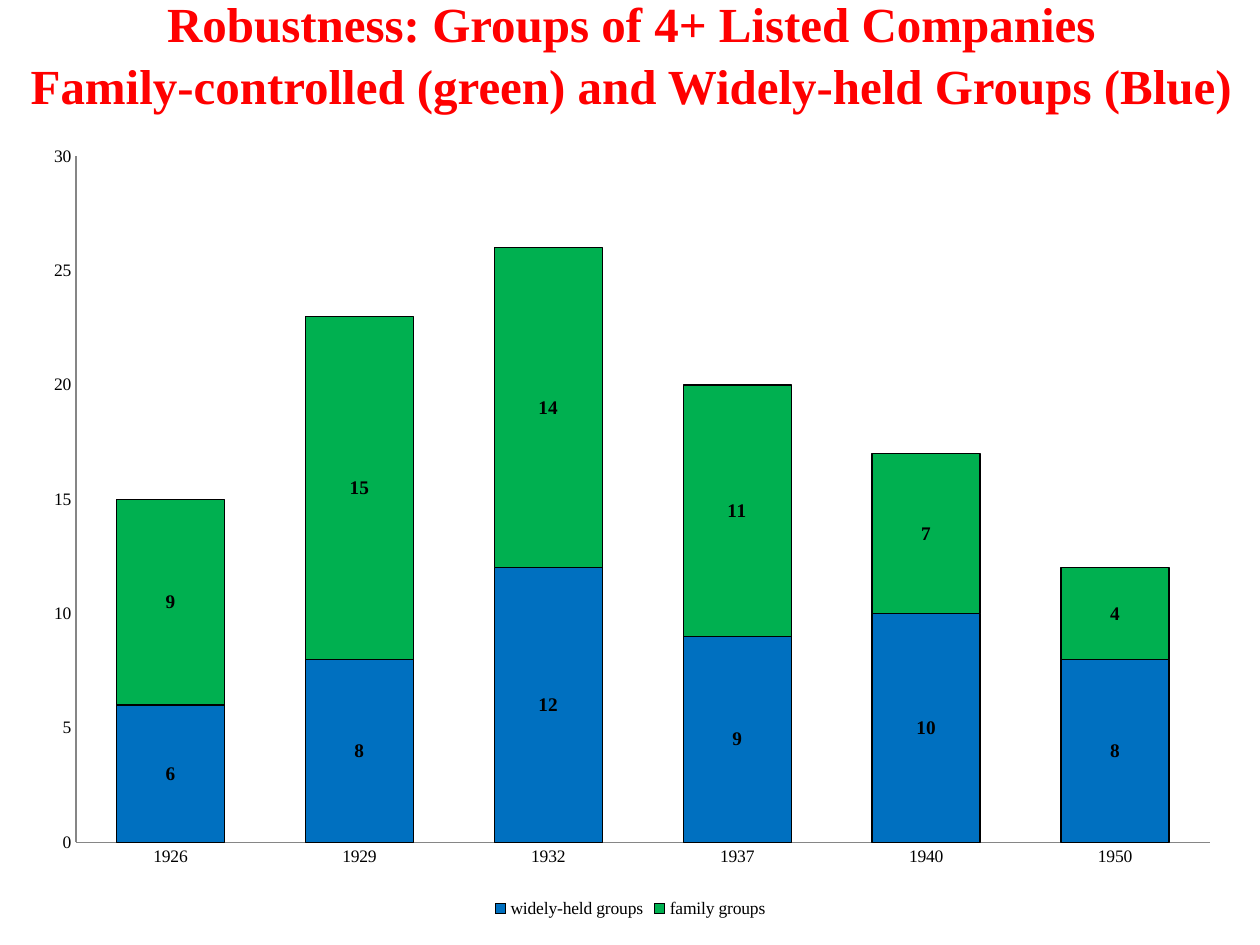
from pptx import Presentation
from pptx.chart.data import CategoryChartData as ChartData
from pptx.dml.color import RGBColor
from pptx.enum.chart import XL_CHART_TYPE as ChartType
from pptx.enum.chart import XL_LABEL_POSITION as LabelPosition
from pptx.enum.chart import XL_LEGEND_POSITION as LegendPosition
from pptx.enum.chart import XL_TICK_MARK as TickMark
from pptx.enum.text import MSO_ANCHOR as Anchor
from pptx.enum.text import MSO_AUTO_SIZE as AutoSize
from pptx.enum.text import PP_ALIGN as Align
from pptx.oxml import parse_xml
from pptx.oxml.ns import nsdecls
from pptx.util import Cm, Pt

YEARS = ["1926", "1929", "1932", "1937", "1940", "1950"]
GROUPS = [
    ("widely-held groups", [6, 8, 12, 9, 10, 8], "0070C0"),
    ("family groups", [9, 15, 14, 11, 7, 4], "00B050"),
]
TITLE = (
    "Robustness: Groups of 4+ Listed Companies\v"
    "Family-controlled (green) and Widely-held Groups (Blue)"
)


def color(value):
    return RGBColor.from_string(value)


def assign(target, values):
    for name, value in values.items():
        setattr(target, name, value)


class SlideBuilder:
    """Holds the text style and the current slide, and adds its elements."""

    font_name = "Times New Roman"
    ink = "000000"
    axis_ink = "868686"

    def __init__(self, slide):
        self.slide = slide

    def style_font(self, font, size, ink=None, bold=False):
        assign(font, {"name": self.font_name, "size": Pt(size), "bold": bold})
        font.color.rgb = color(ink or self.ink)

    def style_line(self, line, ink):
        assign(line, {"width": Pt(0.75)})
        line.color.rgb = color(ink)

    def title(self, text, left, top, width, height):
        shape = self.slide.shapes.title
        assign(shape, {"left": Cm(left), "top": Cm(top), "width": Cm(width), "height": Cm(height)})
        frame = shape.text_frame
        frame.text = text
        assign(frame, {
            "word_wrap": True,
            "auto_size": AutoSize.NONE,
            "vertical_anchor": Anchor.MIDDLE,
        })
        paragraph = frame.paragraphs[0]
        assign(paragraph, {"alignment": Align.CENTER, "line_spacing": 1.05})
        for run in paragraph.runs:
            self.style_font(run.font, 28, "FF0000", True)

    def stacked_chart(self, categories, groups, left, top, width, height):
        data = ChartData()
        data.categories = categories
        for name, values, _ in groups:
            data.add_series(name, values)
        chart = self.slide.shapes.add_chart(
            ChartType.COLUMN_STACKED, Cm(left), Cm(top), Cm(width), Cm(height), data
        ).chart
        assign(chart, {"has_title": False, "has_legend": True})
        self.style_font(chart.font, 10)
        assign(chart.legend, {"position": LegendPosition.BOTTOM, "include_in_layout": False})
        plot = chart.plots[0]
        assign(plot, {"gap_width": 75, "overlap": 100, "vary_by_categories": False})
        for series, (_, _, fill) in zip(plot.series, groups):
            self.series(series, fill)
        for axis in (chart.category_axis, chart.value_axis):
            self.axis(axis)
        assign(chart.value_axis, {"minimum_scale": 0, "maximum_scale": 30, "major_unit": 5})
        self.place_plot(chart, x=0.037, y=0.038, w=0.947, h=0.86)

    def series(self, series, fill):
        series.format.fill.solid()
        series.format.fill.fore_color.rgb = color(fill)
        self.style_line(series.format.line, self.ink)
        labels = series.data_labels
        assign(labels, {"show_value": True, "position": LabelPosition.CENTER})
        self.style_font(labels.font, 11, bold=True)

    def axis(self, axis):
        assign(axis, {
            "has_major_gridlines": False,
            "major_tick_mark": TickMark.NONE,
            "minor_tick_mark": TickMark.NONE,
        })
        self.style_font(axis.tick_labels.font, 10)
        self.style_line(axis.format.line, self.axis_ink)

    def place_plot(self, chart, **box):
        sizes = "".join(f'<c:{name} val="{value}"/>' for name, value in box.items())
        layout = parse_xml(
            f'<c:layout {nsdecls("c")}><c:manualLayout><c:layoutTarget val="inner"/>'
            f'<c:xMode val="edge"/><c:yMode val="edge"/>{sizes}</c:manualLayout></c:layout>'
        )
        area = chart.element.chart.plotArea
        for old in area.findall(layout.tag):
            area.remove(old)
        area.insert(0, layout)


def main():
    presentation = Presentation()
    assign(presentation, {"slide_width": Cm(25.4), "slide_height": Cm(19.05)})
    builder = SlideBuilder(presentation.slides.add_slide(presentation.slide_layouts[5]))
    builder.title(TITLE, 0.05, 0, 25.35, 2.1)
    builder.stacked_chart(YEARS, GROUPS, 0.64, 2.54, 24.13, 16.08)
    presentation.save("out.pptx")


if __name__ == "__main__":
    main()
